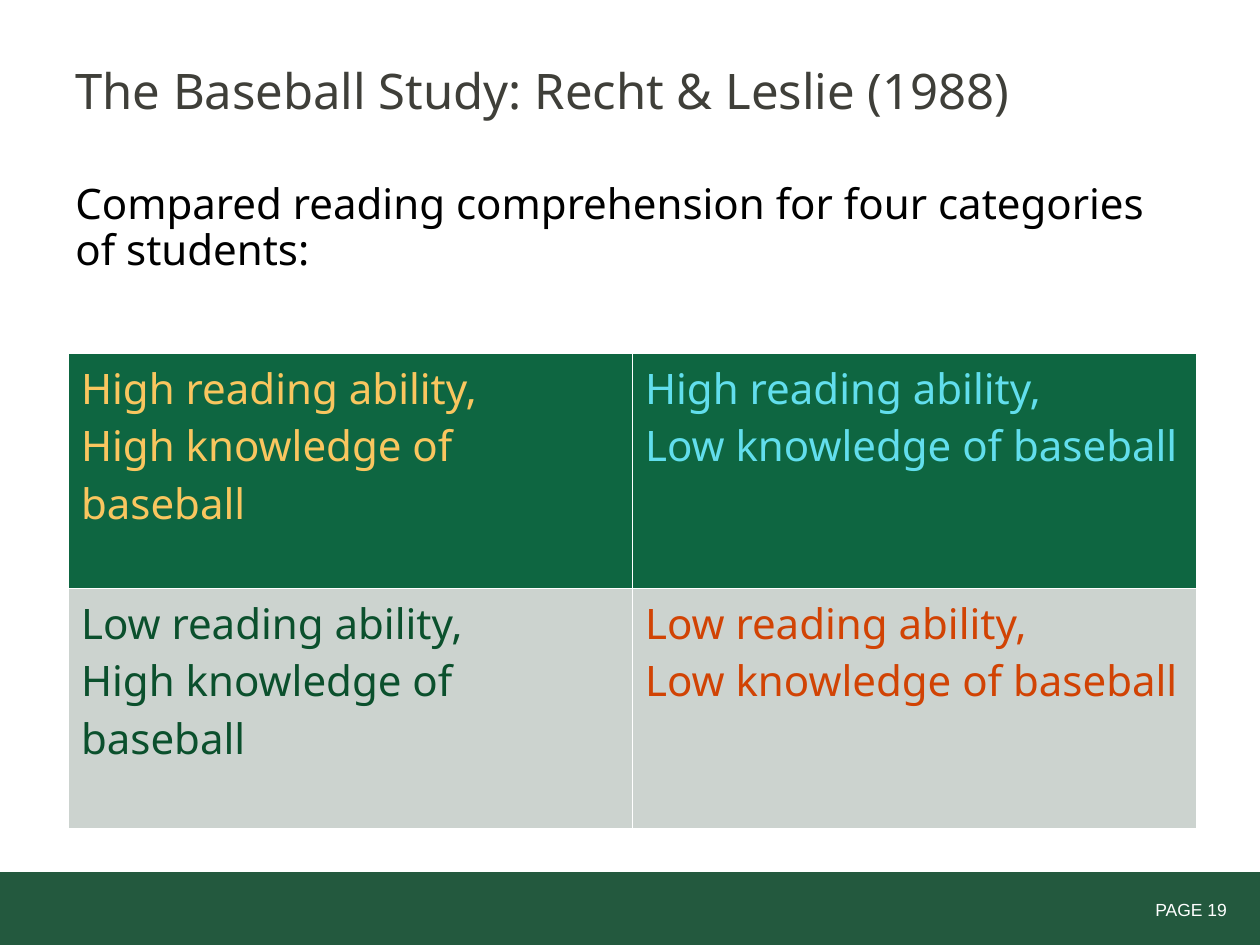
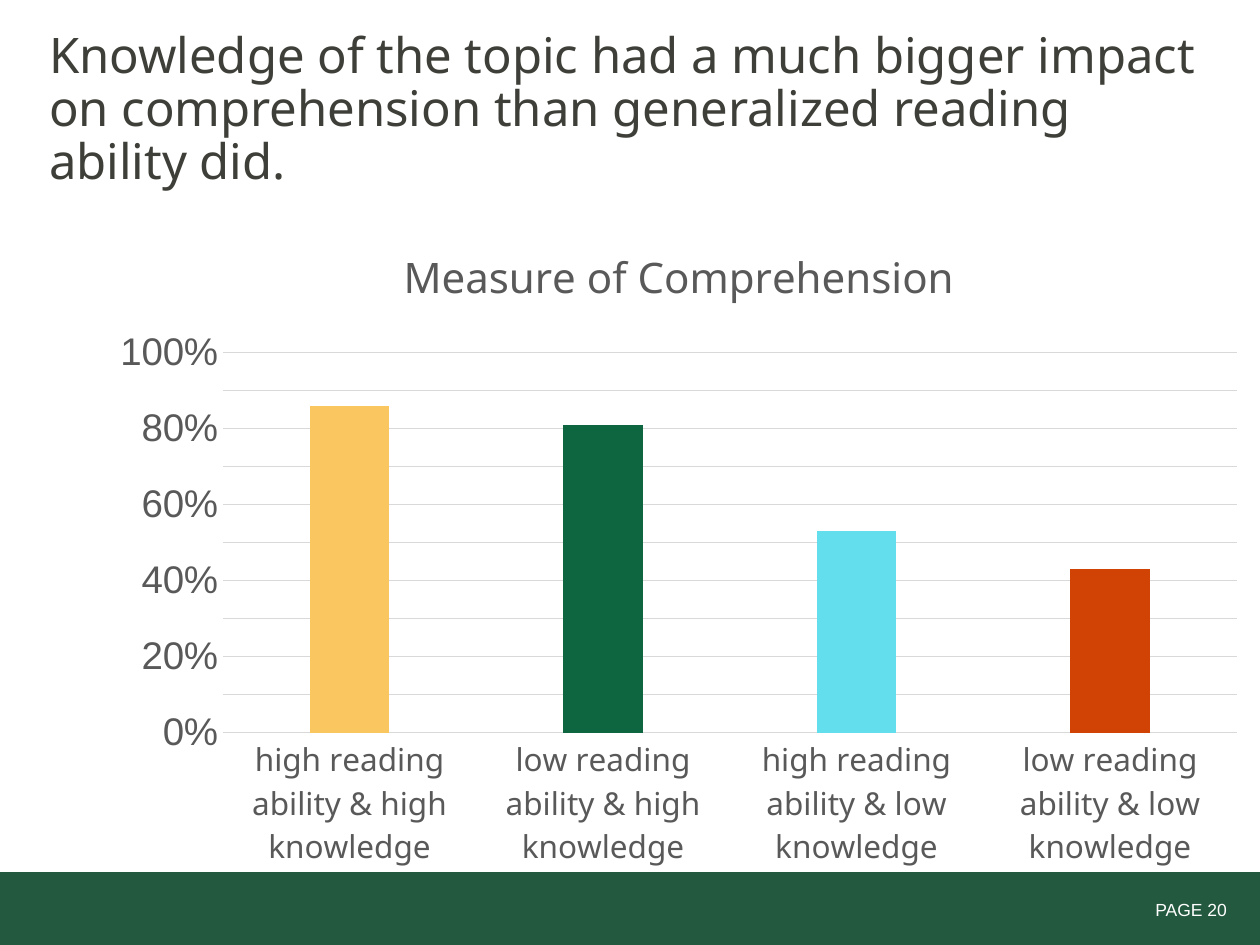
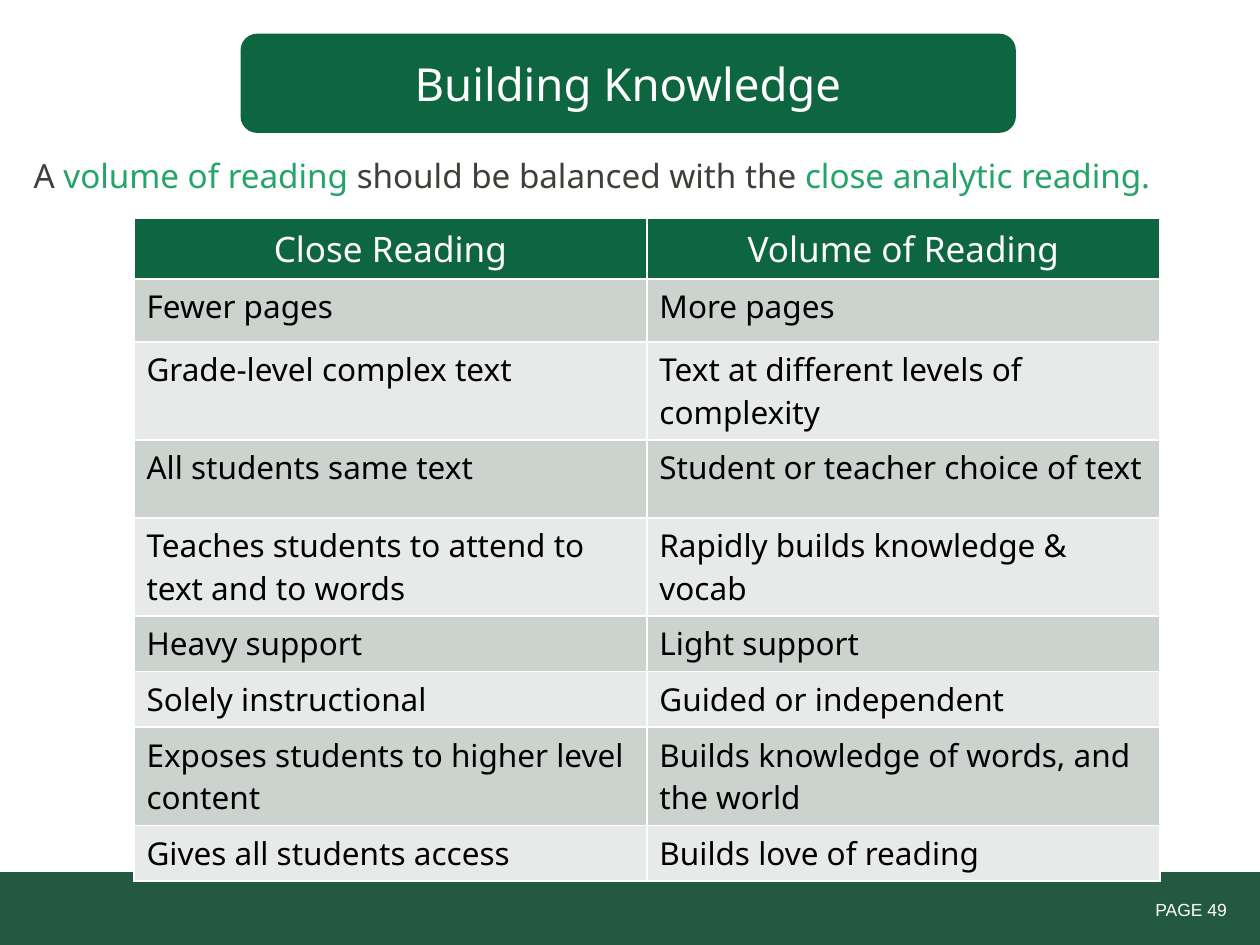
"""Build three slides on reading comprehension and background knowledge."""
from lxml import etree
from pptx import Presentation
from pptx import util as u
from pptx.chart import data
from pptx.dml import color
from pptx.enum import chart as charts, shapes, text
from pptx.oxml import ns

COLORS = {
    "band": "23593E", "green": "0E6641", "dark_green": "0B502D", "accent": "24A469",
    "yellow": "F9C65F", "cyan": "62DEED", "orange": "D14304",
    "title": "3F3F39", "black": "000000", "white": "FFFFFF",
    "odd_row": "CCD3CF", "even_row": "E7EAE9", "axis": "595959", "grid": "D9D9D9",
}
RGB = {name: color.RGBColor.from_string(code) for name, code in COLORS.items()}
FACE = "Noto Sans"


def write(frame, words, size, tint, face=FACE, align=text.PP_ALIGN.LEFT, spacing=1.0):
    """Fill a text frame and format all of its runs."""
    frame.word_wrap = True
    frame.text = words
    for para in frame.paragraphs:
        para.alignment = align
        para.line_spacing = spacing
        for span in para.runs:
            span.font.size = u.Pt(size)
            span.font.name = face
            span.font.color.rgb = RGB[tint]


def add_grid(page, left, top, width, heights, fills):
    """Add a two-column table with white borders and one fill per row."""
    table = page.shapes.add_table(
        len(heights), 2, u.Cm(left), u.Cm(top), u.Cm(2 * width), u.Cm(sum(heights))).table
    for column in table.columns:
        column.width = u.Cm(width)
    for row, height, fill in zip(table.rows, heights, fills):
        row.height = u.Cm(height)
        for cell in row.cells:
            properties = cell._tc.get_or_add_tcPr()
            for side in ("lnL", "lnR", "lnT", "lnB"):
                line = etree.SubElement(properties, ns.qn(f"a:{side}"), w=str(u.Pt(1)))
                solid = etree.SubElement(line, ns.qn("a:solidFill"))
                etree.SubElement(solid, ns.qn("a:srgbClr"), val=COLORS["white"])
            cell.fill.solid()
            cell.fill.fore_color.rgb = RGB[fill]
    return table


deck = Presentation()
deck.slide_width, deck.slide_height = u.Cm(25.4), u.Cm(19.05)

pages = []
for number in (19, 20, 49):
    page = deck.slides.add_slide(deck.slide_layouts[6])
    band = page.shapes.add_shape(
        shapes.MSO_SHAPE.RECTANGLE, 0, u.Cm(17.58), u.Cm(25.4), u.Cm(1.47))
    band.shadow.inherit = False
    band.fill.solid()
    band.fill.fore_color.rgb = RGB["band"]
    band.line.fill.background()
    footer = page.shapes.add_textbox(u.Cm(21), u.Cm(18), u.Cm(3.98), u.Cm(0.7))
    write(footer.text_frame, f"PAGE {number}", 10, "white", "Arial", text.PP_ALIGN.RIGHT)
    pages.append(page)
study, results, knowledge = pages

for words, top, height, size, tint, anchor in (
    ("The Baseball Study: Recht & Leslie (1988)", 0.3, 3.18, 28, "title", text.MSO_ANCHOR.MIDDLE),
    ("Compared reading comprehension for four categories of students:",
     3.45, 3.2, 24, "black", text.MSO_ANCHOR.TOP),
):
    box = study.shapes.add_textbox(u.Cm(1.27), u.Cm(top), u.Cm(22.86), u.Cm(height))
    box.text_frame.vertical_anchor = anchor
    box.text_frame.margin_top = box.text_frame.margin_bottom = u.Cm(0.25)
    write(box.text_frame, words, size, tint, spacing=0.9)

groups = (
    (("High", "High", "yellow"), ("High", "Low", "cyan")),
    (("Low", "High", "dark_green"), ("Low", "Low", "orange")),
)
table = add_grid(study, 1.38, 7.12, 11.37, (4.74, 4.85), ("green", "odd_row"))
for row, group in zip(table.rows, groups):
    for cell, (ability, baseball, tint) in zip(row.cells, group):
        write(cell.text_frame,
              f"{ability} reading ability,\n{baseball} knowledge of baseball", 24, tint)

scores = data.CategoryChartData(number_format="0%")
scores.categories = (
    "high reading ability & high knowledge", "low reading ability & high knowledge",
    "high reading ability & low knowledge", "low reading ability & low knowledge")
scores.add_series("Series 1", (0.86, 0.81, 0.53, 0.43))
chart = results.shapes.add_chart(
    charts.XL_CHART_TYPE.COLUMN_CLUSTERED,
    u.Cm(1.96), u.Cm(4.37), u.Cm(23.44), u.Cm(13.39), scores).chart
chart.has_legend = False
chart.font.size = u.Pt(10)
chart.font.name = "Arial"
chart.has_title = True
write(chart.chart_title.text_frame, "Measure of Comprehension", 24, "axis",
      align=text.PP_ALIGN.CENTER)
chart.chart_title.text_frame.paragraphs[0].runs[0].font.bold = False
chart.chart_title.include_in_layout = False
plot = chart.plots[0]
plot.vary_by_categories = False
plot.gap_width, plot.overlap = 219, -27
for index, tint in enumerate(("yellow", "green", "cyan", "orange")):
    fill = plot.series[0].points[index].format.fill
    fill.solid()
    fill.fore_color.rgb = RGB[tint]

for axis, size, face in ((chart.category_axis, 18, FACE), (chart.value_axis, 22, "Arial")):
    axis.major_tick_mark = axis.minor_tick_mark = charts.XL_TICK_MARK.NONE
    axis.tick_labels.font.size = u.Pt(size)
    axis.tick_labels.font.name = face
    axis.tick_labels.font.color.rgb = RGB["axis"]
values = chart.value_axis
values.minimum_scale, values.maximum_scale, values.major_unit = 0, 1, 0.1
values.tick_labels.number_format = "0%"
values.tick_labels.number_format_is_linked = False
values.format.line.fill.background()
for line in (chart.category_axis.format.line, values.major_gridlines.format.line):
    line.color.rgb = RGB["grid"]
    line.width = u.Pt(0.75)

heading = results.shapes.add_textbox(u.Cm(0.74), u.Cm(0.5), u.Cm(23.93), u.Cm(3.84))
write(heading.text_frame,
      "Knowledge of the topic had a much bigger impact on comprehension "
      "than generalized reading ability did.", 28, "title", spacing=0.9)

comparison = (
    ("Close Reading", "Volume of Reading", 1.22),
    ("Fewer pages", "More pages", 1.27),
    ("Grade-level complex text", "Text at different levels of complexity", 1.98),
    ("All students same text", "Student or teacher choice of text", 1.57),
    ("Teaches students to attend to text and to words", "Rapidly builds knowledge & vocab", 1.98),
    ("Heavy support", "Light support", 1.12),
    ("Solely instructional", "Guided or independent", 1.12),
    ("Exposes students to higher level content", "Builds knowledge of words, and the world", 1.98),
    ("Gives all students access", "Builds love of reading", 1.12),
)
table = add_grid(knowledge, 2.7, 4.4, 10.34, [entry[2] for entry in comparison],
                 ["green"] + ["odd_row", "even_row"] * 4)
for index, entry in enumerate(comparison):
    for cell, words in zip(table.rows[index].cells, entry):
        if index == 0:
            write(cell.text_frame, words, 20, "white", align=text.PP_ALIGN.CENTER)
        else:
            write(cell.text_frame, words, 18, "black")

sentence = knowledge.shapes.add_textbox(u.Cm(0.43), u.Cm(3), u.Cm(24.97), u.Cm(1.07))
sentence.text_frame.word_wrap = True
para = sentence.text_frame.paragraphs[0]
for words, tint in (
    ("A ", "title"), ("volume of reading ", "accent"),
    ("should be balanced with the ", "title"), ("close analytic reading.", "accent"),
):
    span = para.add_run()
    span.text = words
    span.font.size = u.Pt(19)
    span.font.name = FACE
    span.font.color.rgb = RGB[tint]

banner = knowledge.shapes.add_shape(
    shapes.MSO_SHAPE.ROUNDED_RECTANGLE, u.Cm(4.85), u.Cm(0.68), u.Cm(15.63), u.Cm(2))
banner.shadow.inherit = False
banner.fill.solid()
banner.fill.fore_color.rgb = RGB["green"]
banner.line.fill.background()
banner.text_frame.vertical_anchor = text.MSO_ANCHOR.MIDDLE
write(banner.text_frame, "Building Knowledge", 26, "white", align=text.PP_ALIGN.CENTER)

deck.save("out.pptx")
